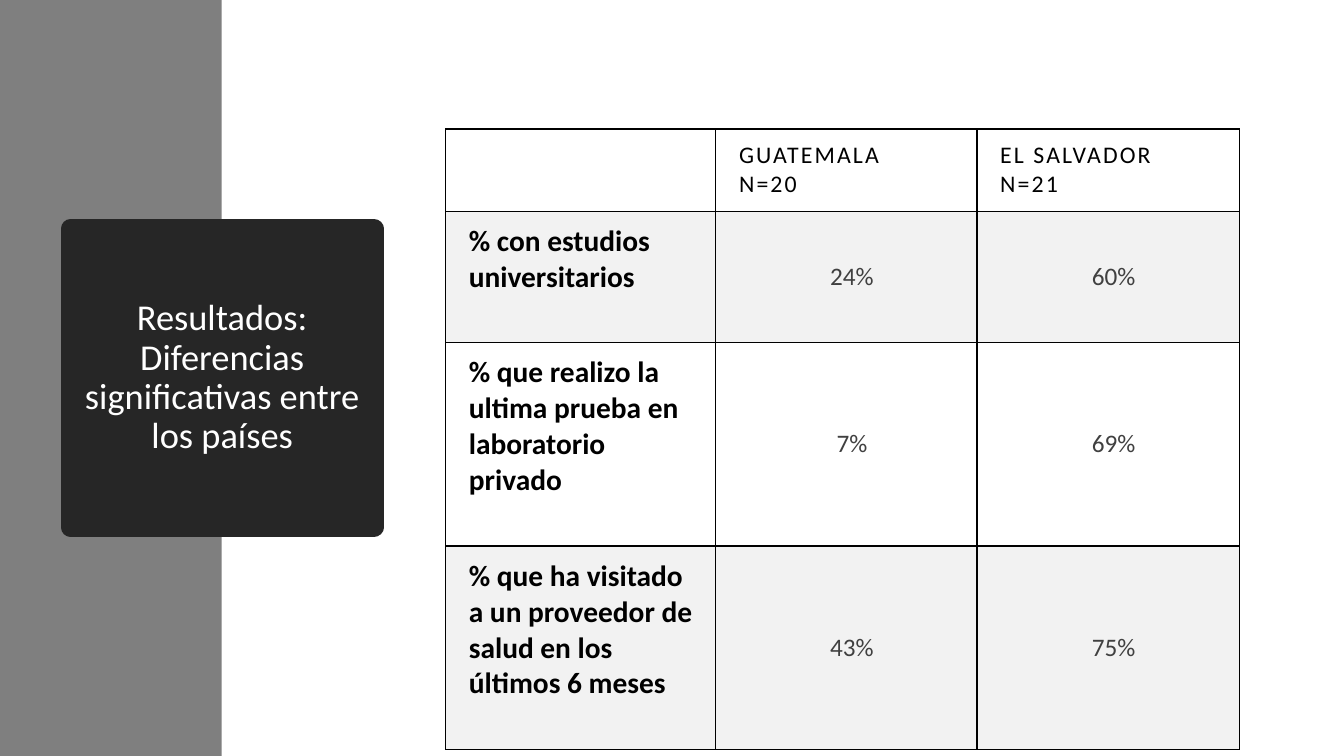
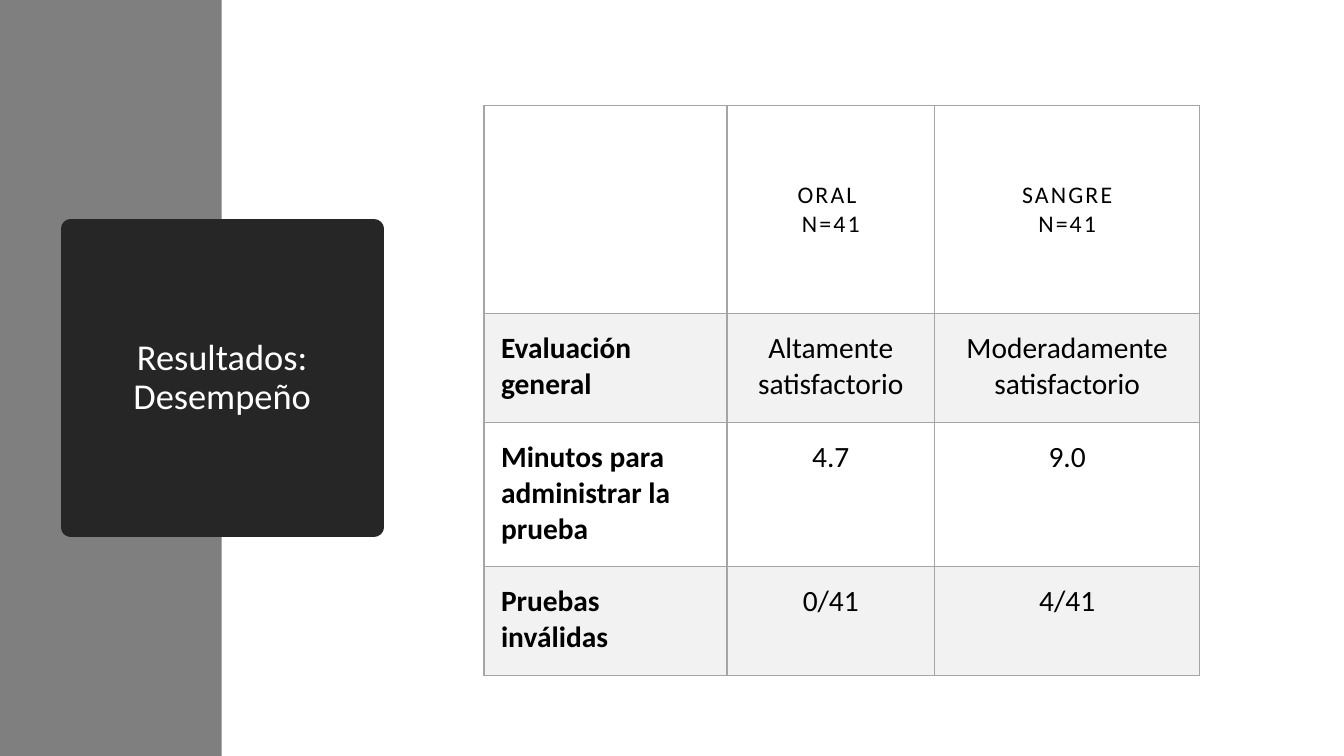
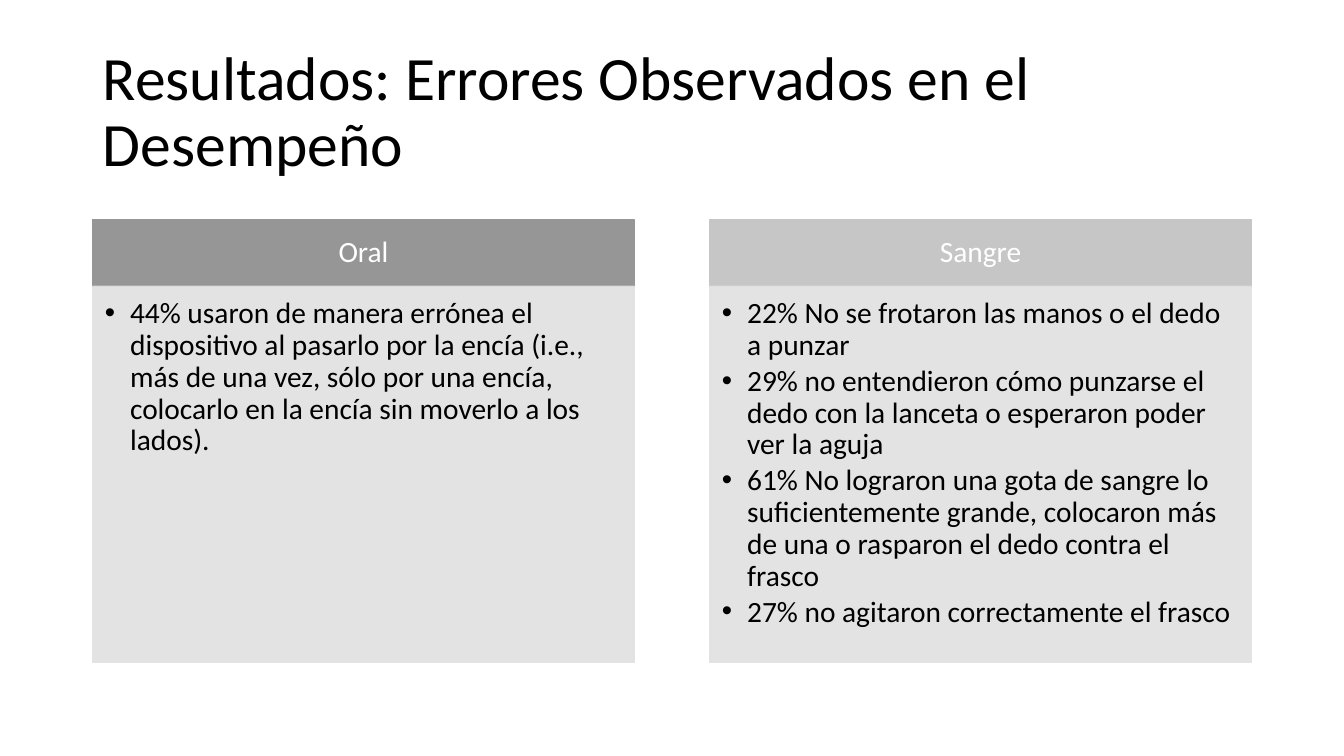
import pptx
import pptx.util
import pptx.dml.color
import pptx.enum.shapes
import pptx.enum.text
import pptx.oxml
import pptx.oxml.ns

Inches = pptx.util.Inches
Pt = pptx.util.Pt
qn = pptx.oxml.ns.qn
ALIGN = pptx.enum.text.PP_ALIGN
ANCHOR = pptx.enum.text.MSO_ANCHOR
NS = pptx.oxml.ns.nsdecls("a")

BAND, DARK, WHITE, BLACK = "7F7F7F", "262626", "FFFFFF", "000000"
STRIPE, PALE = "F2F2F2", "E1E1E1"
TIGHT = {"line_spacing": 0.9, "space_before": Pt(0)}
LEFT = {"alignment": ALIGN.LEFT}
MID = {"alignment": ALIGN.CENTER}
HEAD = {"size": Pt(17), "bold": False}
LABEL = {"size": Pt(21), "bold": True}


def rgb(code):
    """Turn a hex string into a colour."""
    return pptx.dml.color.RGBColor.from_string(code)


def apply(item, *forms):
    """Set attributes of an item from dicts of format values."""
    for form in forms:
        for name, value in form.items():
            setattr(item, name, value)


def paint(shape, code, width):
    """Give a shape a solid fill and a line of the same colour."""
    shape.fill.solid()
    shape.fill.fore_color.rgb = rgb(code)
    if width:
        shape.line.color.rgb = rgb(code)
        shape.line.width = Pt(width)
    else:
        shape.line.fill.background()


def place(shape, box):
    """Move a shape to a box of left, top, width and height in inches."""
    names = ("left", "top", "width", "height")
    apply(shape, dict(zip(names, map(Inches, box))))


def pad(left, top, right, bottom):
    """Build a dict of text margins from inches."""
    names = ("margin_left", "margin_top", "margin_right", "margin_bottom")
    return dict(zip(names, map(Inches, (left, top, right, bottom))))


def write(frame, lines, font, code, para):
    """Fill a text frame with one paragraph for each line."""
    frame.text = "\n".join(lines)
    for part in frame.paragraphs:
        apply(part, para)
        for run in part.runs:
            apply(run.font, {"name": "Calibri"}, font)
            run.font.color.rgb = rgb(code)


def title(slide, text, box, size, code, para):
    """Place and format the title of a slide."""
    shape = slide.shapes.title
    place(shape, box)
    frame = shape.text_frame
    apply(frame, {"word_wrap": True, "vertical_anchor": ANCHOR.MIDDLE,
                  "auto_size": pptx.enum.text.MSO_AUTO_SIZE.NONE})
    write(frame, [text], {"size": Pt(size)}, code, {**TIGHT, **para})
    return shape


def side(slide, text, box):
    """Draw the side band with the dark title card over its edge."""
    left, top, width, height = box
    band = slide.shapes.add_shape(
        pptx.enum.shapes.MSO_SHAPE.RECTANGLE, *map(Inches, box))
    band.shadow.inherit = False
    paint(band, BAND, 0)
    slide.shapes._spTree.insert(2, band._element)
    spot = (left + 0.7, top + 2.27, 3.01, 2.96)
    card = title(slide, text, spot, 26, WHITE, MID)
    paint(card, DARK, 13.75)
    line = card._element.spPr.find(qn("a:ln"))
    line.append(pptx.oxml.parse_xml(f"<a:round {NS}/>"))


def edge(cell, code):
    """Draw a thin border on all four sides of a cell."""
    props = cell._tc.get_or_add_tcPr()
    for key in "LRTB":
        props.append(pptx.oxml.parse_xml(
            f'<a:ln{key} {NS} w="{Pt(1)}"><a:solidFill>'
            f'<a:srgbClr val="{code}"/></a:solidFill></a:ln{key}>'))


def grid(slide, spot, cols, rows, data, look):
    """Build a striped table with labels in its first column."""
    box = (*spot, sum(cols), sum(rows))
    table = slide.shapes.add_table(
        len(rows), len(cols), *map(Inches, box)).table
    apply(table, {"first_row": False, "horz_banding": False})
    for col, width in zip(table.columns, cols):
        col.width = Inches(width)
    for y, (row, height) in enumerate(zip(table.rows, rows)):
        row.height = Inches(height)
        for x, cell in enumerate(row.cells):
            edge(cell, look["edge"])
            if y % 2:
                cell.fill.solid()
                cell.fill.fore_color.rgb = rgb(STRIPE)
            else:
                cell.fill.background()
            if y == 0:
                font, code, para, anchor = HEAD, BLACK, *look["head"]
            elif x == 0:
                font, code, para, anchor = LABEL, BLACK, LEFT, ANCHOR.TOP
            else:
                font, code, para, anchor = *look["body"], MID, look["anchor"]
            apply(cell, look["pad"], {"vertical_anchor": anchor})
            write(cell.text_frame, data[y][x].split("\n"), font, code, para)
            if y == 0:
                for part in cell.text_frame.paragraphs:
                    for run in part.runs:
                        run.font._element.set("spc", "150")


def column(head, body, box, code, name, items):
    """Fill a heading bar and the bullet list below it."""
    left, top, width, height = box
    bar = 0.66
    place(head, (left, top, width, bar))
    place(body, (left, top + bar, width, height - bar))
    paint(head, code, 1)
    paint(body, PALE, 1)
    for clr in body._element.spPr.iter(qn("a:srgbClr")):
        clr.append(pptx.oxml.parse_xml(f'<a:alpha {NS} val="90000"/>'))
    fit = {"word_wrap": True,
           "auto_size": pptx.enum.text.MSO_AUTO_SIZE.NONE}
    apply(head.text_frame, fit, pad(0.16, 0.09, 0.16, 0.09),
          {"vertical_anchor": ANCHOR.MIDDLE})
    apply(body.text_frame, fit, pad(0.12, 0.12, 0.16, 0.18),
          {"vertical_anchor": ANCHOR.TOP})
    font = {"size": Pt(21), "bold": False}
    write(head.text_frame, [name], font, WHITE, {**TIGHT, **MID})
    write(body.text_frame, items, font, BLACK,
          {**TIGHT, **LEFT, "space_after": Pt(3)})
    for part in body.text_frame.paragraphs:
        props = part._p.get_or_add_pPr()
        props.set("marL", str(Inches(0.25)))
        props.set("indent", str(-Inches(0.25)))
        props.append(pptx.oxml.parse_xml(f'<a:buChar {NS} char="•"/>'))


def main():
    """Build the deck and save it."""
    deck = pptx.Presentation()
    apply(deck, {"slide_width": Inches(13.33), "slide_height": Inches(7.5)})
    plain, pair = deck.slide_layouts[5], deck.slide_layouts[4]
    band = (0, 0, 2.2, 7.5)

    slide = deck.slides.add_slide(plain)
    side(slide, "Resultados: Diferencias significativas entre los países", band)
    grid(slide, (4.42, 1.28), (2.68, 2.59, 2.6), (0.81, 1.3, 2.02, 2.02), [
        ("", "GUATEMALA\nN=20", "EL SALVADOR\nN=21"),
        ("% con estudios universitarios", "24%", "60%"),
        ("% que realizo la ultima prueba en laboratorio privado", "7%", "69%"),
        ("% que ha visitado a un proveedor de salud en los últimos 6 meses",
         "43%", "75%"),
    ], {"edge": BLACK, "pad": pad(0.23, 0.12, 0.12, 0.12),
        "head": (LEFT, ANCHOR.TOP), "anchor": ANCHOR.MIDDLE,
        "body": ({"size": Pt(18), "bold": False}, "404040")})

    slide = deck.slides.add_slide(plain)
    side(slide, "Resultados: Desempeño", band)
    grid(slide, (4.8, 1.05), (2.41, 2.06, 2.63), (2.06, 1.08, 1.43, 1.08), [
        ("", "ORAL \nN=41", "SANGRE\nN=41"),
        ("Evaluación general", "Altamente satisfactorio",
         "Moderadamente satisfactorio"),
        ("Minutos para administrar la prueba", "4.7", "9.0"),
        ("Pruebas inválidas", "0/41", "4/41"),
    ], {"edge": "A5A5A5", "pad": pad(0.17, 0.17, 0.17, 0.17),
        "head": (MID, ANCHOR.MIDDLE), "anchor": ANCHOR.TOP,
        "body": ({"size": Pt(21), "bold": False}, BLACK)})

    slide = deck.slides.add_slide(pair)
    title(slide, "Resultados: Errores Observados en el Desempeño",
          (0.92, 0.4, 11.5, 1.45), 44, BLACK, LEFT)
    lists = [
        ("969696", "Oral", [
            "44% usaron de manera errónea el dispositivo al pasarlo por la "
            "encía (i.e., más de una vez, sólo por una encía, colocarlo en "
            "la encía sin moverlo a los lados)."]),
        ("C6C6C6", "Sangre", [
            "22% No se frotaron las manos o el dedo a punzar",
            "29% no entendieron cómo punzarse el dedo con la lanceta o "
            "esperaron poder ver la aguja",
            "61% No lograron una gota de sangre lo suficientemente grande, "
            "colocaron más de una o rasparon el dedo contra el frasco",
            "27% no agitaron correctamente el frasco"]),
    ]
    slots = list(slide.placeholders)[1:]
    for i, (code, name, items) in enumerate(lists):
        box = (0.92 + i * 6.12, 2.18, 5.37, 4.39)
        column(slots[2 * i], slots[2 * i + 1], box, code, name, items)

    deck.save("out.pptx")


if __name__ == "__main__":
    main()
